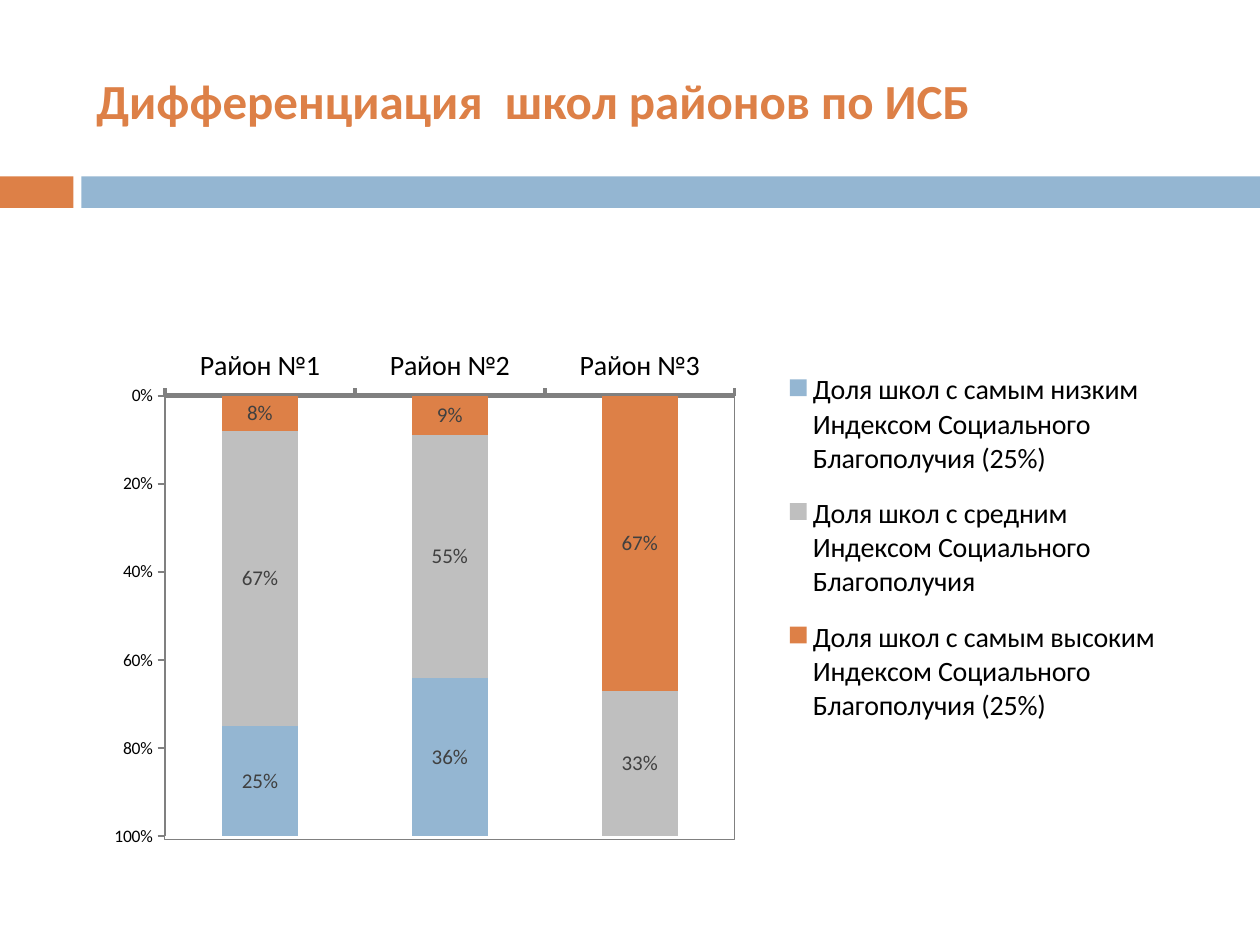
from pptx import Presentation
from pptx.chart.data import CategoryChartData
from pptx.dml.color import RGBColor
from pptx.enum.chart import XL_CHART_TYPE, XL_LEGEND_POSITION, XL_TICK_MARK
from pptx.enum.shapes import MSO_SHAPE
from pptx.enum.text import MSO_ANCHOR
from pptx.oxml import parse_xml
from pptx.oxml.ns import nsdecls, qn
from pptx.util import Pt

COLORS = {"high": "DD8047", "middle": "BFBFBF", "low": "94B6D2",
          "axis": "808080", "label": "404040", "text": "000000"}
DISTRICTS = ["Район №1", "Район №2", "Район №3"]
SHARES = [
    ("high", "Доля школ с самым высоким Индексом Социального Благополучия (25%)", (8, 9, 67)),
    ("middle", "Доля школ с средним Индексом Социального Благополучия", (67, 55, 33)),
    ("low", "Доля школ с самым низким Индексом Социального Благополучия (25%)", (25, 36, None)),
]


def rgb(name):
    return RGBColor.from_string(COLORS[name])


def write(tf, text, size=18, color="text", bold=False, font="Calibri"):
    r = tf.paragraphs[0].add_run()
    r.text = text
    style(r.font, size, color, bold, font)


def style(f, size, color="text", bold=False, font="Calibri"):
    f.name, f.size, f.bold = font, Pt(size), bold
    f.color.rgb = rgb(color)


def place(element, index, x, y, w, h, inner=False):
    for old in element.findall(qn("c:layout")):
        element.remove(old)
    target = '<c:layoutTarget val="inner"/>' if inner else ""
    modes = '<c:xMode val="edge"/><c:yMode val="edge"/>'
    sizes = "".join(f'<c:{k} val="{v}"/>' for k, v in zip("xywh", (x, y, w, h)))
    element.insert(index, parse_xml(
        f'<c:layout {nsdecls("c")}><c:manualLayout>{target}{modes}{sizes}'
        '</c:manualLayout></c:layout>'))


class Deck:
    """Holds the presentation style and the current slide."""

    def __init__(self, width, height):
        self.prs = Presentation()
        self.prs.slide_width, self.prs.slide_height = Pt(width), Pt(height)
        self.s = self.prs.slides.add_slide(self.prs.slide_layouts[6])

    def rect(self, x, y, w, h, fill=None, line=None):
        sp = self.s.shapes.add_shape(MSO_SHAPE.RECTANGLE, Pt(x), Pt(y), Pt(w), Pt(h))
        sp.shadow.inherit = False
        if fill:
            sp.fill.solid()
            sp.fill.fore_color.rgb = rgb(fill)
        else:
            sp.fill.background()
        if line:
            sp.line.color.rgb = rgb(line)
            sp.line.width = Pt(0.25)
        else:
            sp.line.fill.background()

    def text(self, x, y, w, h, text, **fmt):
        tf = self.s.shapes.add_textbox(Pt(x), Pt(y), Pt(w), Pt(h)).text_frame
        tf.word_wrap = True
        tf.vertical_anchor = MSO_ANCHOR.MIDDLE
        write(tf, text, **fmt)

    def axis(self, axis, size, width):
        axis.has_major_gridlines = False
        axis.major_tick_mark = XL_TICK_MARK.OUTSIDE
        axis.minor_tick_mark = XL_TICK_MARK.NONE
        axis.format.line.color.rgb = rgb("axis")
        axis.format.line.width = Pt(width)
        style(axis.tick_labels.font, size)

    def chart(self, x, y, w, h, categories, series):
        data = CategoryChartData(number_format="0")
        data.categories = categories
        for _, name, values in series:
            data.add_series(name, values)
        chart = self.s.shapes.add_chart(XL_CHART_TYPE.COLUMN_STACKED_100,
                                        Pt(x), Pt(y), Pt(w), Pt(h), data).chart
        chart.has_title = False
        style(chart.font, 18)
        self.axis(chart.category_axis, 16, 2)
        value_axis = chart.value_axis
        self.axis(value_axis, 10, 1)
        value_axis.reverse_order = True
        value_axis.major_unit = 0.2
        value_axis.tick_labels.number_format = "0%"
        value_axis.tick_labels.number_format_is_linked = False

        plot = chart.plots[0]
        plot.gap_width, plot.overlap, plot.vary_by_categories = 150, 100, False
        for ser, (color, _, _) in zip(plot.series, series):
            ser.format.fill.solid()
            ser.format.fill.fore_color.rgb = rgb(color)
            labels = ser.data_labels
            labels.show_value = True
            labels.number_format = "#\\%"
            labels.number_format_is_linked = False
            style(labels.font, 12, "label")

        chart.has_legend = True
        legend = chart.legend
        legend.position = XL_LEGEND_POSITION.RIGHT
        legend.include_in_layout = False
        style(legend.font, 16)
        place(plot._element.getparent(), 0, 0.056, 0.224, 0.532, 0.752, inner=True)
        place(legend._element, 1, 0.63, 0.15, 0.36, 0.67)


def main():
    deck = Deck(720, 540)
    deck.rect(0, 100.8, 42, 18, fill="high")
    deck.rect(46.5, 100.8, 673.5, 18, fill="low")
    deck.text(48, 18, 642, 78, "Дифференциация  школ районов по ИСБ",
              size=28, color="high", bold=True)
    deck.chart(60, 151.2, 612, 334.8, DISTRICTS, SHARES)
    deck.rect(93.6, 224.8, 326, 254.9, line="axis")
    deck.prs.save("out.pptx")


if __name__ == "__main__":
    main()
